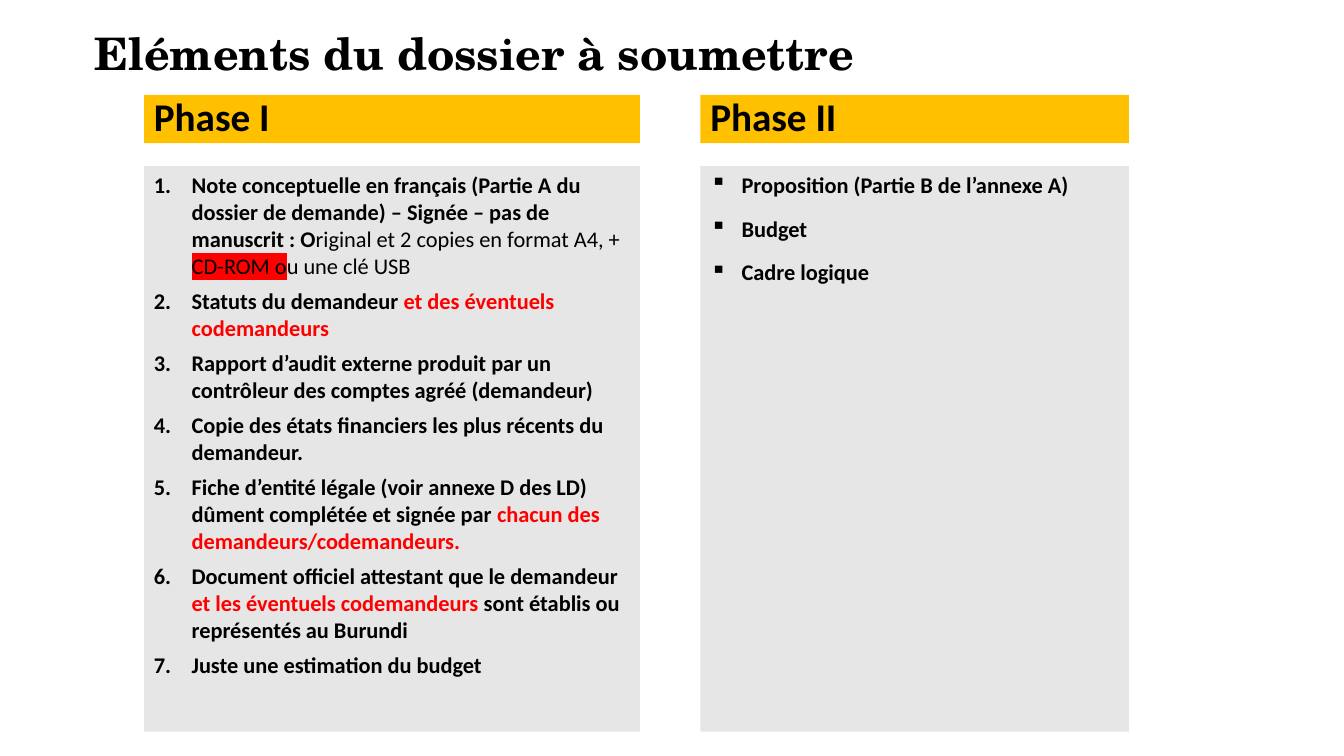
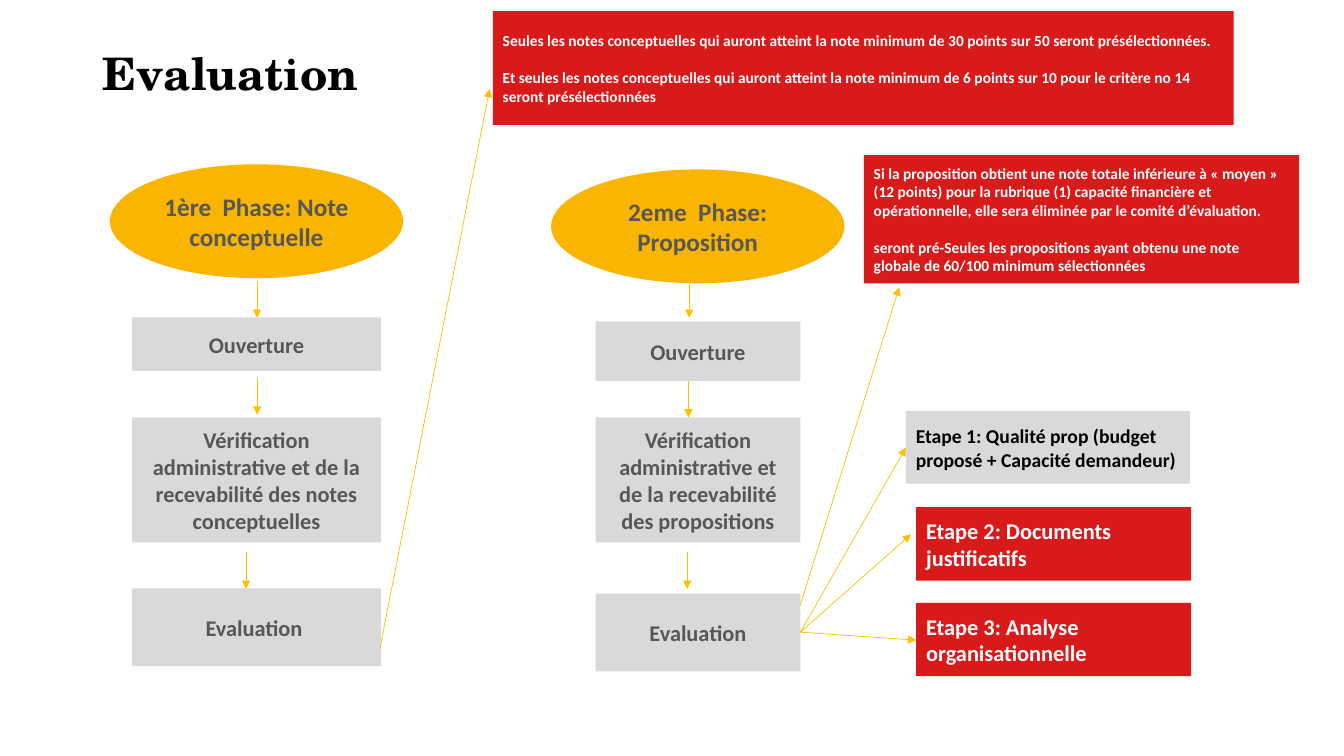
from dataclasses import dataclass
from typing import NamedTuple

import lxml.etree
import pptx
import pptx.dml.color
import pptx.enum.shapes
import pptx.enum.text
import pptx.oxml.ns
import pptx.util

Cm, Pt = pptx.util.Cm, pptx.util.Pt
qn = pptx.oxml.ns.qn
ALIGN = pptx.enum.text.PP_ALIGN
ANCHOR = pptx.enum.text.MSO_ANCHOR
SHAPE = pptx.enum.shapes.MSO_SHAPE


# Theme
@dataclass(frozen=True)
class Theme:
    black: str = "000000"
    white: str = "FFFFFF"
    dark_grey: str = "585756"
    highlight: str = "FF0000"
    band: str = "FFC000"
    phase: str = "F9B500"
    panel: str = "E7E6E6"
    step: str = "D9D9D9"
    alert: str = "D81A1A"
    title_font: str = "TeX Gyre Schola"
    body_font: str = "Calibri"
    title_size: int = 32
    band_size: int = 28
    phase_size: int = 18
    body_size: int = 16
    small_size: int = 14
    note_size: int = 11
    arrow_width: float = 0.5


THEME = Theme()


# Repeated elements, lengths in centimetres
class Box(NamedTuple):
    left: float
    top: float
    width: float
    height: float


class Arrow(NamedTuple):
    x1: float
    y1: float
    x2: float
    y2: float


class Run(NamedTuple):
    text: str
    bold: bool = True
    color: str | None = None
    marked: bool = False


@dataclass(frozen=True)
class Style:
    size: int
    color: str = THEME.black
    font: str = THEME.body_font
    align: ALIGN = ALIGN.LEFT
    anchor: ANCHOR = ANCHOR.MIDDLE
    line_spacing: float = 1.0
    before: float = 0
    after: float = 0
    bullet: str = ""
    indent: float = 0


TITLE = Style(THEME.title_size, font=THEME.title_font, line_spacing=0.9)
BAND = Style(THEME.band_size, line_spacing=0.9)
NUMBERED = Style(THEME.body_size, anchor=ANCHOR.TOP, after=6,
                 bullet="number", indent=0.95)
BULLETED = Style(THEME.body_size, anchor=ANCHOR.TOP, before=12,
                 bullet="▪", indent=0.79)
PHASE = Style(THEME.phase_size, THEME.dark_grey, align=ALIGN.CENTER)
STEP = Style(THEME.body_size, THEME.dark_grey, align=ALIGN.CENTER)
QUALITY = Style(THEME.small_size)
STAGE = Style(THEME.body_size, THEME.white)
NOTE = Style(THEME.note_size, THEME.white, before=13.4)

Paragraph = list[Run]


def plain(*texts: str) -> list[Paragraph]:
    return [[Run(text)] for text in texts]


def rgb(color: str) -> pptx.dml.color.RGBColor:
    return pptx.dml.color.RGBColor.from_string(color)


def apply(target: object, formats: dict) -> None:
    for name, value in formats.items():
        setattr(target, name, value)


# Text
def add_bullet(paragraph, style: Style) -> None:
    properties = paragraph._p.get_or_add_pPr()
    properties.set("marL", str(Cm(style.indent)))
    properties.set("indent", str(-Cm(style.indent)))
    if style.bullet == "number":
        lxml.etree.SubElement(properties, qn("a:buAutoNum"), type="arabicPeriod")
    else:
        lxml.etree.SubElement(properties, qn("a:buChar"), char=style.bullet)


def add_run(paragraph, content: Run, style: Style) -> None:
    run = paragraph.add_run()
    run.text = content.text
    apply(run.font, {"name": style.font, "size": Pt(style.size), "bold": content.bold})
    run.font.color.rgb = rgb(content.color or style.color)
    if content.marked:
        mark = lxml.etree.Element(qn("a:highlight"))
        lxml.etree.SubElement(mark, qn("a:srgbClr"), val=THEME.highlight)
        run.font._element.find(qn("a:solidFill")).addnext(mark)


def write(frame, paragraphs: list[Paragraph], style: Style) -> None:
    apply(frame, {"word_wrap": True, "vertical_anchor": style.anchor})
    for index, runs in enumerate(paragraphs):
        paragraph = frame.add_paragraph() if index else frame.paragraphs[0]
        apply(paragraph, {
            "alignment": style.align,
            "line_spacing": style.line_spacing,
            "space_before": Pt(style.before if index else 0),
            "space_after": Pt(style.after),
        })
        if style.bullet:
            add_bullet(paragraph, style)
        for content in runs:
            add_run(paragraph, content, style)


# Drawing
def add_title(slide, text: str, left: float, top: float) -> None:
    title = slide.shapes.add_textbox(Cm(left), Cm(top), Cm(29.21), Cm(1.8))
    write(title.text_frame, plain(text), TITLE)


def add_block(slide, box: Box, fill: str, paragraphs: list[Paragraph],
              style: Style, outline: SHAPE = SHAPE.RECTANGLE) -> None:
    block = slide.shapes.add_shape(outline, *map(Cm, box))
    block.shadow.inherit = False
    block.fill.solid()
    block.fill.fore_color.rgb = rgb(fill)
    block.line.fill.background()
    write(block.text_frame, paragraphs, style)


def add_arrow(slide, arrow: Arrow) -> None:
    link = slide.shapes.add_connector(
        pptx.enum.shapes.MSO_CONNECTOR.STRAIGHT, *map(Cm, arrow))
    link.line.color.rgb = rgb(THEME.band)
    link.line.width = Pt(THEME.arrow_width)
    properties = link.element.spPr
    lxml.etree.SubElement(properties.find(qn("a:ln")), qn("a:tailEnd"), type="triangle")
    lxml.etree.SubElement(properties, qn("a:effectLst"))


# Slide 1: application file
class Column(NamedTuple):
    left: float
    width: float
    heading: str
    items: list[Paragraph]
    style: Style


COLUMNS = [
    Column(3.63, 12.5, "Phase I", [
        [Run("Note conceptuelle en français (Partie A du dossier de demande) "
             "– Signée – pas de manuscrit : O"),
         Run("riginal et 2 copies en format A4, + ", bold=False),
         Run("CD-ROM o", bold=False, marked=True),
         Run("u une clé USB", bold=False)],
        [Run("Statuts du demandeur "),
         Run("et des éventuels codemandeurs", color=THEME.highlight)],
        *plain("Rapport d’audit externe produit par un contrôleur des comptes "
               "agréé (demandeur)",
               "Copie des états financiers les plus récents du demandeur."),
        [Run("Fiche d’entité légale (voir annexe D des LD) dûment complétée et "
             "signée par "),
         Run("chacun des demandeurs/codemandeurs.", color=THEME.highlight)],
        [Run("Document officiel attestant que le demandeur "),
         Run("et les éventuels codemandeurs ", color=THEME.highlight),
         Run("sont établis ou représentés au Burundi")],
        *plain("Juste une estimation du budget"),
    ], NUMBERED),
    Column(17.65, 10.8, "Phase II", plain(
        "Proposition (Partie B de l’annexe A)", "Budget", "Cadre logique"), BULLETED),
]


def build_application(slide) -> None:
    add_title(slide, "Eléments du dossier à soumettre", 2.13, 0.5)
    for column in COLUMNS:
        add_block(slide, Box(column.left, 2.39, column.width, 1.22), THEME.band,
                  plain(column.heading), BAND)
        add_block(slide, Box(column.left, 4.19, column.width, 14.25), THEME.panel,
                  column.items, column.style)


# Slide 2: evaluation
class Step(NamedTuple):
    text: str
    top: float
    height: float


class Flow(NamedTuple):
    phase: str
    phase_left: float
    phase_top: float
    left: float
    width: float
    steps: list[Step]
    arrow_starts: list[tuple[float, float]]


class Panel(NamedTuple):
    box: Box
    fill: str
    style: Style
    texts: list[str]


FLOWS = [
    Flow("1ère  Phase: Note conceptuelle", 2.77, 4.14, 3.33, 6.27, [
        Step("Ouverture", 8.0, 1.35),
        Step("Vérification administrative et de la recevabilité des notes "
             "conceptuelles", 10.52, 3.15),
        Step("Evaluation ", 14.83, 1.96),
    ], [(6.48, 7.09), (6.48, 9.53), (6.2, 13.92)]),
    Flow("2eme  Phase: Proposition", 13.89, 4.27, 15.01, 5.16, [
        Step("Ouverture", 8.1, 1.5),
        Step("Vérification administrative et de la recevabilité des propositions",
             10.52, 3.15),
        Step("Evaluation", 14.96, 1.96),
    ], [(17.37, 7.09), (17.35, 9.6), (17.32, 13.92)]),
]
ARROW_DROP = 0.92

PANELS = [
    Panel(Box(22.83, 10.36, 7.16, 1.83), THEME.step, QUALITY,
          ["Etape 1: Qualité prop (budget proposé + Capacité demandeur)"]),
    Panel(Box(23.09, 12.78, 6.93, 1.85), THEME.alert, STAGE,
          ["Etape 2: Documents justificatifs"]),
    Panel(Box(23.09, 15.19, 6.93, 1.85), THEME.alert, STAGE,
          ["Etape 3: Analyse organisationnelle"]),
    Panel(Box(12.42, 0.28, 18.67, 2.87), THEME.alert, NOTE, [
        "Seules les notes conceptuelles qui auront atteint la note minimum de "
        "30 points sur 50 seront présélectionnées.",
        "Et seules les notes conceptuelles qui auront atteint la note minimum de "
        "6 points sur 10 pour le critère no 14 seront présélectionnées"]),
    Panel(Box(21.77, 3.91, 10.97, 3.23), THEME.alert, NOTE, [
        "Si la proposition obtient une note totale inférieure à « moyen » "
        "(12 points) pour la rubrique (1) capacité financière et opérationnelle, "
        "elle sera éliminée par le comité d’évaluation.",
        "seront pré-Seules les propositions ayant obtenu une note globale de "
        "60/100 minimum sélectionnées"]),
]

OUTCOMES = [
    Arrow(20.17, 15.93, 22.83, 11.28),
    Arrow(20.17, 15.93, 22.96, 13.46),
    Arrow(20.17, 15.93, 23.09, 16.13),
    Arrow(9.58, 16.31, 12.34, 2.24),
    Arrow(20.17, 15.24, 22.66, 7.24),
]


def build_evaluation(slide) -> None:
    add_title(slide, "Evaluation", 2.34, 1.02)
    for flow in FLOWS:
        add_block(slide, Box(flow.phase_left, flow.phase_top, 7.39, 2.87),
                  THEME.phase, plain(flow.phase), PHASE, SHAPE.OVAL)
        for step in flow.steps:
            add_block(slide, Box(flow.left, step.top, flow.width, step.height),
                      THEME.step, plain(step.text), STEP)
        for x, y in flow.arrow_starts:
            add_arrow(slide, Arrow(x, y, x, y + ARROW_DROP))
    for panel in PANELS:
        add_block(slide, panel.box, panel.fill, plain(*panel.texts), panel.style)
    for outcome in OUTCOMES:
        add_arrow(slide, outcome)


def main() -> None:
    deck = pptx.Presentation()
    apply(deck, {"slide_width": Cm(33.87), "slide_height": Cm(19.05)})
    blank = deck.slide_layouts[6]
    for build in (build_application, build_evaluation):
        build(deck.slides.add_slide(blank))
    deck.save("out.pptx")


if __name__ == "__main__":
    main()
